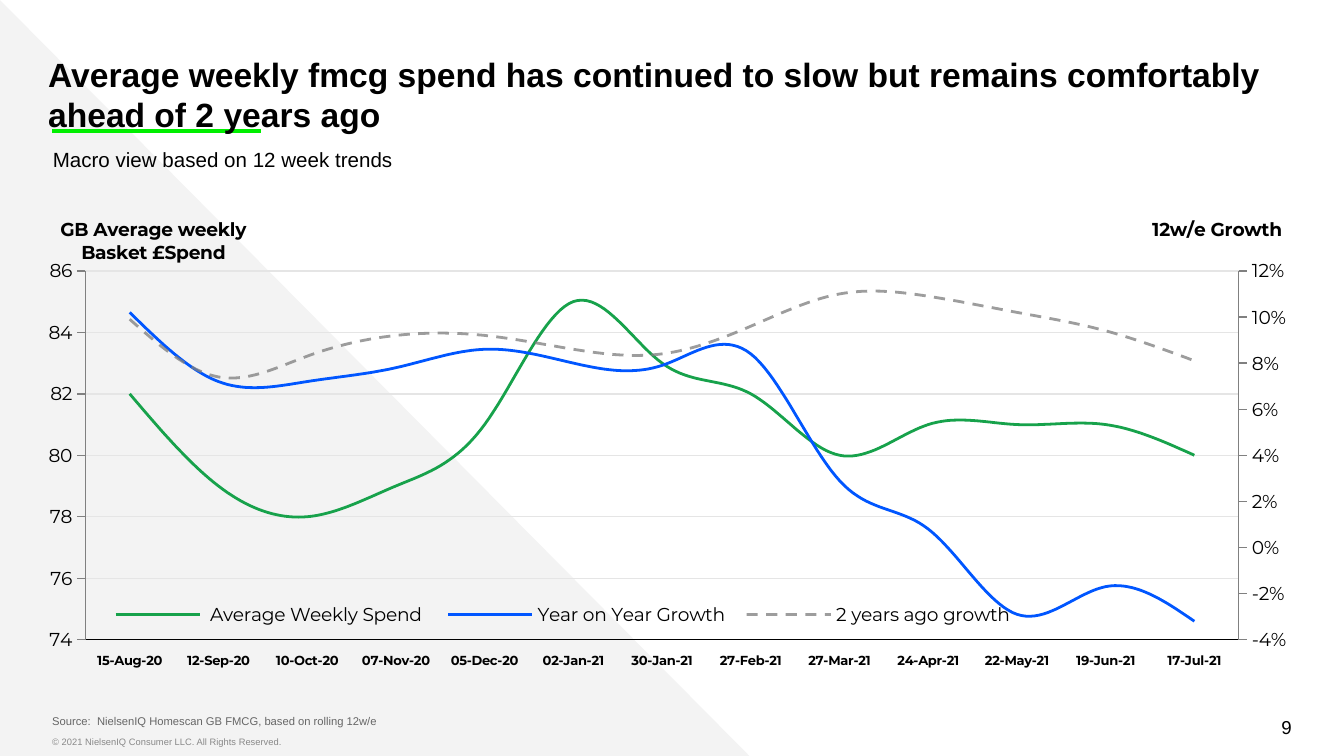
from copy import deepcopy
from dataclasses import dataclass
from lxml.etree import SubElement
from pptx import Presentation
from pptx.chart.axis import CategoryAxis, ValueAxis
from pptx.chart.data import CategoryChartData
from pptx.dml.color import RGBColor
from pptx.enum.chart import XL_CHART_TYPE, XL_LEGEND_POSITION, XL_TICK_LABEL_POSITION, XL_TICK_MARK
from pptx.enum.dml import MSO_LINE
from pptx.enum.shapes import MSO_CONNECTOR, MSO_SHAPE
from pptx.enum.text import MSO_ANCHOR, PP_ALIGN
from pptx.oxml.ns import qn
from pptx.util import Pt


@dataclass(frozen=True)
class Theme:
    ink: str = "000000"
    wedge: str = "F3F3F3"
    lime: str = "00EF00"
    green: str = "17A24B"
    blue: str = "0056FF"
    gray: str = "808080"
    grid: str = "E5E5E5"
    source: str = "666666"
    rights: str = "888888"
    body: str = "Arial"
    plot: str = "Montserrat"
    head: float = 18
    sub: float = 11
    base: float = 10
    date: float = 7
    note: float = 6
    tiny: float = 5


THEME = Theme()
DATES = ["15-Aug-20", "12-Sep-20", "10-Oct-20", "07-Nov-20", "05-Dec-20", "02-Jan-21", "30-Jan-21",
         "27-Feb-21", "27-Mar-21", "24-Apr-21", "22-May-21", "19-Jun-21", "17-Jul-21"]
SERIES = [
    (" Average Weekly Spend ", THEME.green, "0",
     [82, 79, 78, 79, 81, 85, 83, 82, 80, 81, 81, 81, 80]),
    ("Year on Year Growth", THEME.blue, "0%",
     [0.102, 0.072, 0.072, 0.078, 0.086, 0.08, 0.079, 0.084, 0.029, 0.008, -0.029, -0.017, -0.032]),
    ("2 years ago growth", THEME.gray, "0%",
     [0.099, 0.074, 0.083, 0.092, 0.092, 0.086, 0.084, 0.096, 0.11, 0.109, 0.102, 0.094, 0.081]),
]


def put(item, **values):
    for key, value in values.items():
        setattr(item, key, value)


def style(font, size, color=THEME.ink, name=THEME.body, bold=False):
    put(font, size=Pt(size), name=name, bold=bold)
    font.color.rgb = RGBColor.from_string(color)


def stroke(line, color, width):
    line.color.rgb = RGBColor.from_string(color)
    line.width = Pt(width)


def place(shape, left, top, width, height):
    put(shape, left=Pt(left), top=Pt(top), width=Pt(width), height=Pt(height))


def write(shape, text, inset, size, color=THEME.ink, bold=False,
          anchor=MSO_ANCHOR.TOP, align=PP_ALIGN.LEFT):
    frame = shape.text_frame
    side, edge = inset
    put(frame, word_wrap=True, vertical_anchor=anchor, margin_left=Pt(side),
        margin_right=Pt(side), margin_top=Pt(edge), margin_bottom=Pt(edge))
    part = frame.paragraphs[0]
    part.alignment = align
    run = part.add_run()
    run.text = text
    style(run.font, size, color, bold=bold)


def label(slide, box, *args, **kwargs):
    write(slide.shapes.add_textbox(*map(Pt, box)), *args, **kwargs)


def wedge(slide):
    shape = slide.shapes.add_shape(MSO_SHAPE.RIGHT_TRIANGLE, 0, 0, Pt(402.5), Pt(406))
    shape.shadow.inherit = False
    shape.fill.solid()
    shape.fill.fore_color.rgb = RGBColor.from_string(THEME.wedge)
    shape.line.fill.background()


def rule(slide, left, right, top):
    line = slide.shapes.add_connector(MSO_CONNECTOR.STRAIGHT, Pt(left), Pt(top), Pt(right), Pt(top))
    stroke(line.line, THEME.lime, 2.25)
    SubElement(line._element.spPr, qn("a:effectLst"))


def head(slide, text):
    title = slide.shapes.title
    place(title, 25.8, 21.6, 694, 52)
    write(title, text, (0, 7.2), THEME.head, bold=True)
    title._element.getparent().append(title._element)


def locate(node, index, modes, **spots):
    for old in node.findall(qn("c:layout")):
        node.remove(old)
    layout = SubElement(node, qn("c:layout"))
    node.insert(index, layout)
    manual = SubElement(layout, qn("c:manualLayout"))
    for key, value in {**modes, **spots}.items():
        SubElement(manual, qn("c:" + key)).set("val", str(value))


def scale(axis, text, spot, low, high, step, form):
    put(axis, minimum_scale=low, maximum_scale=high, major_unit=step,
        major_tick_mark=XL_TICK_MARK.OUTSIDE, minor_tick_mark=XL_TICK_MARK.NONE)
    put(axis.tick_labels, number_format=form, number_format_is_linked=False)
    style(axis.tick_labels.font, THEME.base, name=THEME.plot)
    stroke(axis.format.line, THEME.gray, 0.75)
    title = axis.axis_title
    run = title.text_frame.paragraphs[0].add_run()
    run.text = text
    style(run.font, THEME.base, name=THEME.plot, bold=True)
    for body in title._element.iter(qn("a:bodyPr")):
        body.set("rot", "0")
        body.set("vert", "horz")
    left, top = spot
    locate(title._element, 1, dict(xMode="edge", yMode="edge"), x=left, y=top)


def split(chart):
    area = chart._chartSpace.chart.plotArea
    first = area.find(qn("c:lineChart"))
    second = deepcopy(first)
    first.addnext(second)
    for node in first.findall(qn("c:ser"))[1:]:
        first.remove(node)
    second.remove(second.find(qn("c:ser")))
    value = deepcopy(area.find(qn("c:valAx")))
    cat = deepcopy(area.find(qn("c:catAx")))
    area.find(qn("c:valAx")).addnext(value)
    value.addnext(cat)
    for node, own, other in ((value, "502", "501"), (cat, "501", "502")):
        node.find(qn("c:axId")).set("val", own)
        node.find(qn("c:crossAx")).set("val", other)
    for node, own in zip(second.findall(qn("c:axId")), ("501", "502")):
        node.set("val", own)
    value.find(qn("c:axPos")).set("val", "r")
    value.find(qn("c:crosses")).set("val", "max")
    CategoryAxis(cat).visible = False
    right = ValueAxis(value)
    right.has_major_gridlines = False
    return right


def trend(slide):
    data = CategoryChartData()
    data.categories = DATES
    for name, color, form, values in SERIES:
        data.add_series(name, values, form)
    box = map(Pt, (26, 108.8, 663, 265.6))
    chart = slide.shapes.add_chart(XL_CHART_TYPE.LINE, *box, data).chart
    put(chart, has_title=False, has_legend=True)
    style(chart.font, THEME.base, name=THEME.plot)
    chart.plots[0].vary_by_categories = False
    for line, (name, color, form, values) in zip(chart.plots[0].series, SERIES):
        line.smooth = True
        stroke(line.format.line, color, 1.5)
    line.format.line.dash_style = MSO_LINE.DASH
    for node in line._element.iter(qn("a:srgbClr")):
        SubElement(node, qn("a:alpha")).set("val", "76000")

    dates = chart.category_axis
    put(dates, major_tick_mark=XL_TICK_MARK.NONE, minor_tick_mark=XL_TICK_MARK.NONE,
        tick_label_position=XL_TICK_LABEL_POSITION.LOW)
    style(dates.tick_labels.font, THEME.date, name=THEME.plot, bold=True)
    stroke(dates.format.line, THEME.ink, 0.75)
    left = chart.value_axis
    right = split(chart)
    left.has_major_gridlines = True
    stroke(left.major_gridlines.format.line, THEME.grid, 0.75)
    scale(left, "GB Average weekly Basket £Spend", (0.005, 0.02), 74, 86, 2, "0")
    scale(right, "12w/e Growth", (0.89, 0.02), -0.04, 0.12, 0.02, "0%")

    edge = dict(xMode="edge", yMode="edge")
    locate(chart._chartSpace.chart.plotArea, 0, dict(layoutTarget="inner", **edge),
           x=0.028, y=0.137, w=0.935, h=0.744)
    put(chart.legend, position=XL_LEGEND_POSITION.BOTTOM, include_in_layout=False)
    style(chart.legend.font, THEME.base, name=THEME.plot)
    locate(chart.legend._element, 1, edge, x=0.04, y=0.8, w=0.75, h=0.06)


def main():
    deck = Presentation()
    put(deck, slide_width=Pt(720), slide_height=Pt(405))
    slide = deck.slides.add_slide(deck.slide_layouts[5])
    wedge(slide)
    label(slide, (28, 391, 399, 14.4), "© 2021 NielsenIQ Consumer LLC. All Rights Reserved.",
          (0, 3.6), THEME.tiny, THEME.rights)
    label(slide, (530, 378.7, 162, 21.6), "9", (0, 3.6), THEME.base,
          anchor=MSO_ANCHOR.MIDDLE, align=PP_ALIGN.RIGHT)
    rule(slide, 28, 140, 70)
    head(slide, "Average weekly fmcg spend has continued to slow but remains comfortably ahead of 2 years ago")
    label(slide, (28, 379, 642, 14.4), "Source:  NielsenIQ Homescan GB FMCG, based on rolling 12w/e",
          (0, 7.2), THEME.note, THEME.source, anchor=MSO_ANCHOR.BOTTOM)
    trend(slide)
    label(slide, (21.2, 75, 360, 21), "Macro view based on 12 week trends", (7.2, 3.6), THEME.sub)
    deck.save("out.pptx")


if __name__ == "__main__":
    main()
